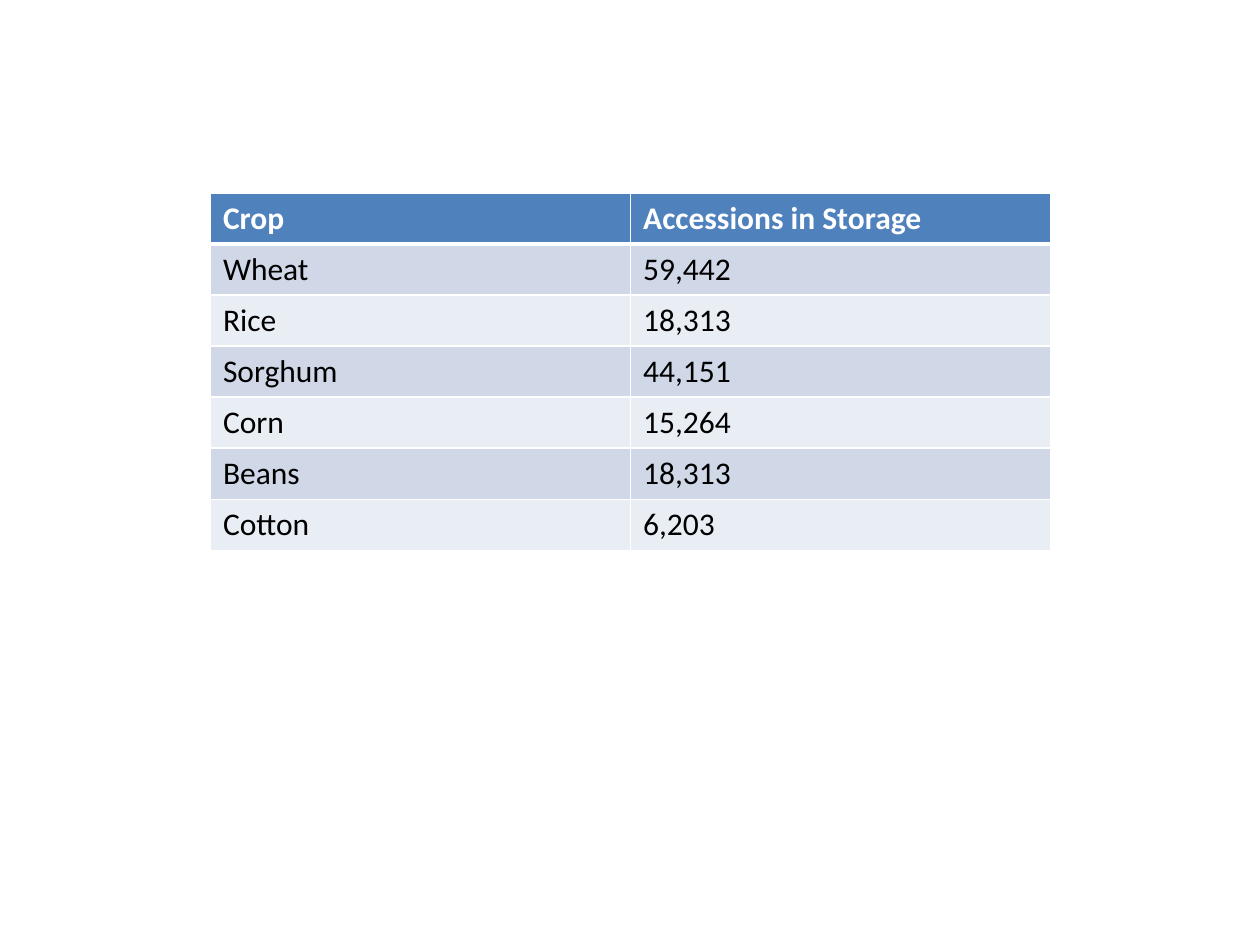
from lxml import etree
from pptx import Presentation
from pptx import util as u
from pptx.dml.color import RGBColor
from pptx.oxml.ns import qn

WHITE = RGBColor(0xFF, 0xFF, 0xFF)
BLACK = RGBColor(0x00, 0x00, 0x00)
HEADER_BLUE = RGBColor(0x4F, 0x81, 0xBD)
BANDS = (RGBColor(0xE9, 0xED, 0xF4), RGBColor(0xD0, 0xD8, 0xE8))

ROWS = [
    ("Crop", "Accessions in Storage"),
    ("Wheat", "59,442"),
    ("Rice", "18,313"),
    ("Sorghum", "44,151"),
    ("Corn", "15,264"),
    ("Beans", "18,313"),
    ("Cotton", "6,203"),
]


def set_borders(cell, top, bottom):
    """Draw white cell borders, with top and bottom widths in points."""
    tc_pr = cell._tc.get_or_add_tcPr()
    for side, width in (("L", 1), ("R", 1), ("T", top), ("B", bottom)):
        ln = etree.SubElement(tc_pr, qn(f"a:ln{side}"), w=str(u.Pt(width)))
        fill = etree.SubElement(ln, qn("a:solidFill"))
        etree.SubElement(fill, qn("a:srgbClr"), val=str(WHITE))


def format_cell(cell, value, row):
    """Fill a cell with its text, band colour and borders."""
    header = row == 0
    cell.text_frame.text = value
    font = cell.text_frame.paragraphs[0].runs[0].font
    font.name, font.size, font.bold = "Calibri", u.Pt(18), header
    font.color.rgb = WHITE if header else BLACK
    set_borders(cell, top=3 if row == 1 else 1, bottom=3 if header else 1)
    cell.fill.solid()
    cell.fill.fore_color.rgb = HEADER_BLUE if header else BANDS[row % 2]


def add_crop_table(s, left, top, width, height):
    """Place the table of stored accessions by crop in the given box."""
    table = s.shapes.add_table(len(ROWS), len(ROWS[0]), left, top, width, height).table
    for row, values in enumerate(ROWS):
        for col, value in enumerate(values):
            format_cell(table.cell(row, col), value, row)


def main():
    """Build and save the slide."""
    prs = Presentation()
    prs.slide_width, prs.slide_height = u.Inches(10), u.Inches(7.5)
    s = prs.slides.add_slide(prs.slide_layouts[6])
    add_crop_table(s, u.Inches(1.67), u.Inches(1.53), u.Inches(6.67), u.Inches(2.84))
    prs.save("out.pptx")


if __name__ == "__main__":
    main()
